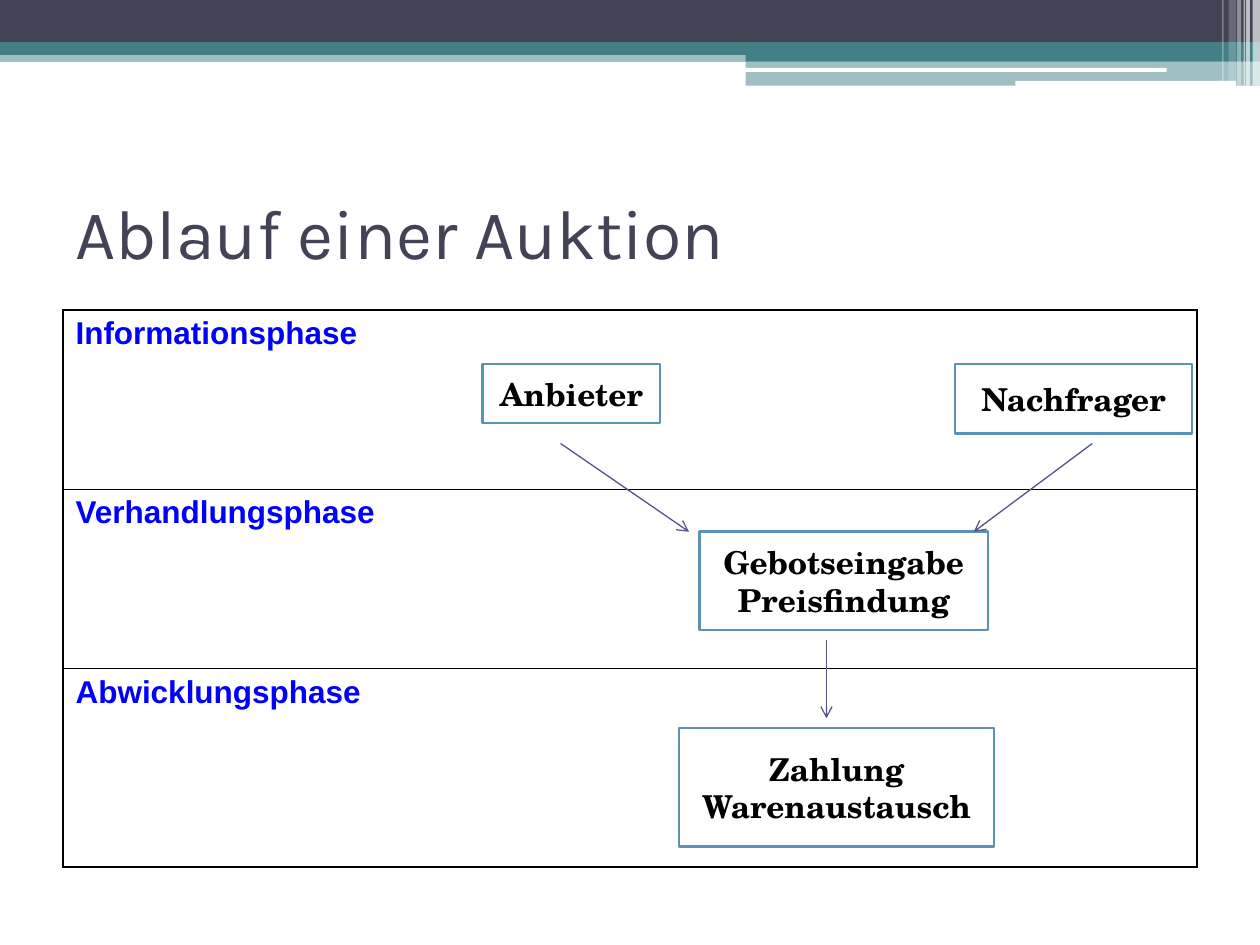
import pptx
import pptx.util
import pptx.dml.color
import pptx.enum.shapes
import pptx.enum.text
import pptx.oxml
import pptx.oxml.ns
import lxml.etree

Cm = pptx.util.Cm
Pt = pptx.util.Pt
qn = pptx.oxml.ns.qn
SHAPE = pptx.enum.shapes.MSO_SHAPE
MIDDLE = pptx.enum.text.MSO_ANCHOR.MIDDLE
CENTER = pptx.enum.text.PP_ALIGN.CENTER


def color(value):
    return pptx.dml.color.RGBColor.from_string(value)


def write(frame, lines, text_color, alignment=None, **font_format):
    """Fill a text frame with one formatted paragraph per line."""
    frame.word_wrap = True
    for index, line in enumerate(lines):
        para = frame.paragraphs[0] if index == 0 else frame.add_paragraph()
        para.alignment = alignment
        span = para.add_run()
        span.text = line
        span.font.color.rgb = color(text_color)
        for name, value in font_format.items():
            setattr(span.font, name, value)


deck = pptx.Presentation()
deck.slide_width, deck.slide_height = Cm(25.4), Cm(19.05)
slide = deck.slides.add_slide(deck.slide_layouts[6])
shapes = slide.shapes

# Header: bands, white rules, then translucent stripes at the right edge
# (preset, left, top, width, height, color, opacity in percent)
header = [
    (SHAPE.RECTANGLE, 0, 1.02, 25.4, 0.23, "438086", 50),
    (SHAPE.RECTANGLE, 0, 0, 25.4, 0.86, "424456", 100),
    (SHAPE.RECTANGLE, 0, 0.85, 25.4, 0.26, "438086", 100),
    (SHAPE.RECTANGLE, 15.03, 0.99, 10.37, 0.25, "438086", 100),
    (SHAPE.RECTANGLE, 15.03, 1.24, 10.37, 0.49, "438086", 50),
    (SHAPE.ROUNDED_RECTANGLE, 15.01, 1.37, 8.51, 0.08, "FFFFFF", 100),
    (SHAPE.ROUNDED_RECTANGLE, 20.47, 1.63, 4.45, 0.1, "FFFFFF", 100),
]
stripes = [
    (25.25, 0.15, 1.73, 65), (25.12, 0.08, 1.73, 65), (25.07, 0.03, 1.73, 60),
    (24.94, 0.08, 1.73, 40), (24.77, 0.15, 1.63, 20), (24.64, 0.03, 1.63, 30),
]
for left, width, height, opacity in stripes:
    header.append((SHAPE.RECTANGLE, left, 0, width, height, "FFFFFF", opacity))

for preset, left, top, width, height, fill, opacity in header:
    band = shapes.add_shape(preset, Cm(left), Cm(top), Cm(width), Cm(height))
    band.shadow.inherit = False
    band.fill.solid()
    band.fill.fore_color.rgb = color(fill)
    band.line.fill.background()
    if opacity < 100:
        fill_color = band.fill._xPr.find(".//" + qn("a:srgbClr"))
        lxml.etree.SubElement(fill_color, qn("a:alpha"), val=str(opacity * 1000))

# Title
title = shapes.add_textbox(Cm(1.27), Cm(3.18), Cm(22.86), Cm(2.97))
title.text_frame.vertical_anchor = MIDDLE
write(title.text_frame, ["Ablauf einer Auktion"], "424456", name="Karla", size=Pt(40))

# Phases
phases = [("Informationsphase", 3.61), ("Verhandlungsphase", 3.61), ("Abwicklungsphase", 4.0)]
table_height = sum(height for _, height in phases)
table = shapes.add_table(len(phases), 1, Cm(1.27), Cm(6.25), Cm(22.86), Cm(table_height)).table
table.first_row = table.horz_banding = False
for index, (phase, height) in enumerate(phases):
    table.rows[index].height = Cm(height)
    cell = table.cell(index, 0)
    write(cell.text_frame, [phase], "0000FF", name="Arial", size=Pt(18), bold=True)
    border_widths = {
        "lnL": 1.25,
        "lnR": 1.25,
        "lnT": 1.25 if index == 0 else 0.75,
        "lnB": 1.25 if index == len(phases) - 1 else 0.75,
    }
    cell_properties = cell._tc.get_or_add_tcPr()
    for side, width in border_widths.items():
        border = lxml.etree.SubElement(cell_properties, qn("a:" + side), w=str(Pt(width)))
        border_fill = lxml.etree.SubElement(border, qn("a:solidFill"))
        lxml.etree.SubElement(border_fill, qn("a:srgbClr"), val="000000")
    cell.fill.background()

# Steps
steps = [
    (["Anbieter"], 9.73, 7.34, 3.58, 1.19),
    (["Nachfrager"], 19.25, 7.34, 4.78, 1.4),
    (["Gebotseingabe", "Preisfindung"], 14.1, 10.72, 5.82, 1.98),
    (["Zahlung", "Warenaustausch"], 13.69, 14.68, 6.35, 2.39),
]
for lines, left, top, width, height in steps:
    box = shapes.add_shape(SHAPE.RECTANGLE, Cm(left), Cm(top), Cm(width), Cm(height))
    box.shadow.inherit = False
    box.fill.solid()
    box.fill.fore_color.rgb = color("FFFFFF")
    box.line.color.rgb = color("5C92B5")
    box.line.width = Pt(1.5)
    box.text_frame.vertical_anchor = MIDDLE
    write(box.text_frame, lines, "000000", CENTER,
          name="TeX Gyre Schola", size=Pt(18), bold=True)

# Arrows between the steps
arrows = [
    (11.3, 8.94, 13.89, 10.72),
    (22.02, 8.94, 19.63, 10.72),
    (16.66, 12.9, 16.66, 14.48),
]
for ends in arrows:
    arrow = shapes.add_connector(
        pptx.enum.shapes.MSO_CONNECTOR.STRAIGHT, *[Cm(end) for end in ends])
    arrow.line.color.rgb = color("53548A")
    arrow.line.width = Pt(0.75)
    lxml.etree.SubElement(arrow.line._get_or_add_ln(), qn("a:tailEnd"), type="arrow")
    lxml.etree.SubElement(arrow._element.spPr, qn("a:effectLst"))

deck.save("out.pptx")
